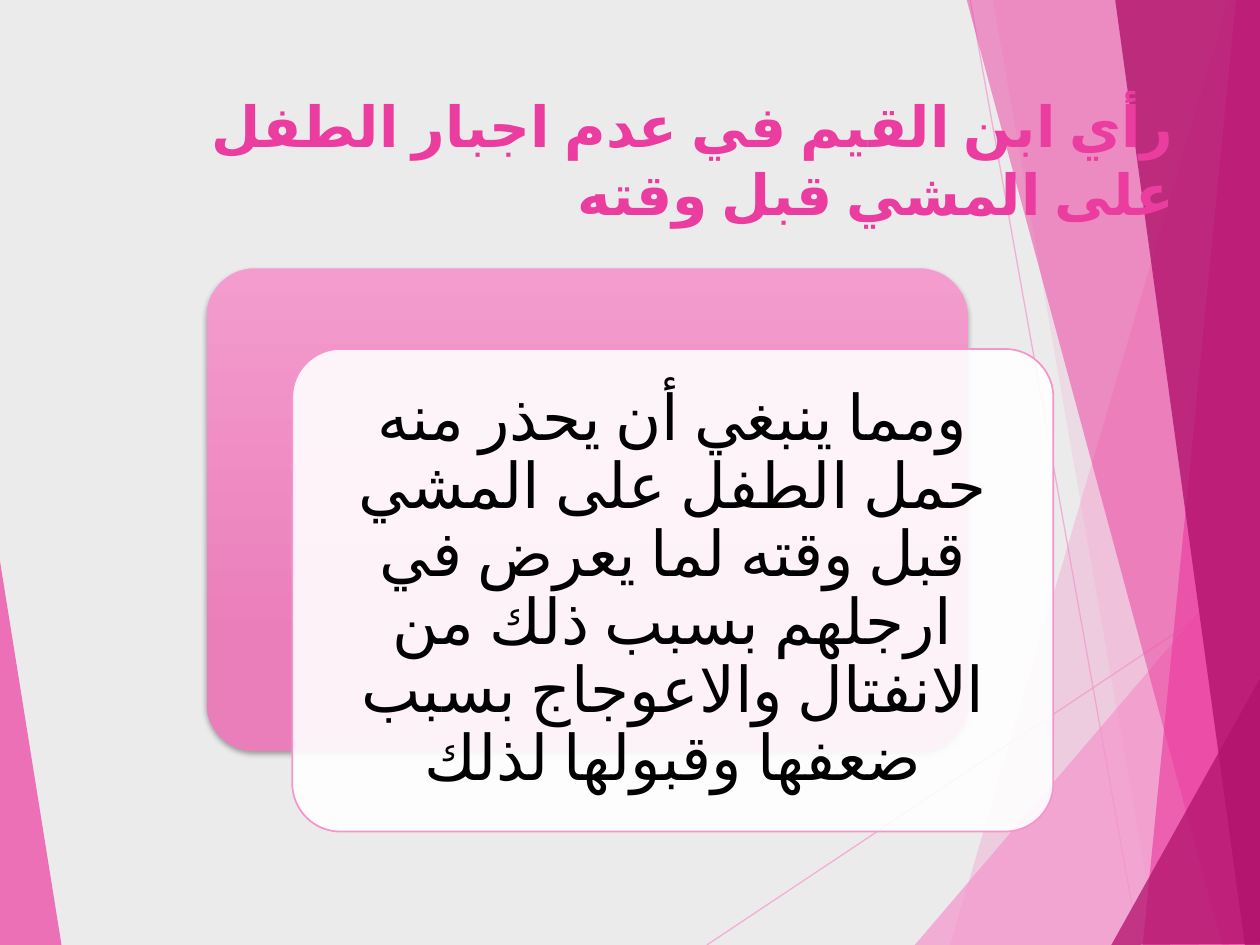
from lxml import etree
from pptx import Presentation
from pptx.dml.color import RGBColor
from pptx.enum.shapes import MSO_CONNECTOR, MSO_SHAPE
from pptx.enum.text import MSO_ANCHOR, PP_ALIGN
from pptx.oxml.ns import qn
from pptx.util import Inches, Pt

STRAIGHT, ROUNDED = MSO_CONNECTOR.STRAIGHT, MSO_SHAPE.ROUNDED_RECTANGLE
TOP, MIDDLE = MSO_ANCHOR.TOP, MSO_ANCHOR.MIDDLE
RIGHT, CENTER = PP_ALIGN.RIGHT, PP_ALIGN.CENTER

WIDTH, HEIGHT = 10, 7.5
FONT = "Karla"
PALE, PINK, DEEP = "F496CB", "EB3D9F", "B2136D"

TITLE = "رأي ابن القيم في عدم اجبار الطفل على المشي قبل وقته"
BODY = ("ومما ينبغي أن يحذر منه حمل الطفل على المشي قبل وقته لما يعرض في "
        "ارجلهم بسبب ذلك من الانفتال والاعوجاج بسبب ضعفها وقبولها لذلك")

RAYS = [(5.61, HEIGHT, 10.01, 4.57), (7.7, 0, 9.04, HEIGHT)]
FACETS = [
    (PALE, 36, [(9.75, 0), (7.54, 7.5), (10.02, 7.51), (10.01, 0.01)]),
    (PALE, 20, [(7.88, -0.01), (9.19, 7.5), (10.01, 7.5), (10.01, -0.01)]),
    (PALE, 72, [(7.26, 7.5), (10, 4.29), (10.01, 7.5)]),
    (PINK, 50, [(7.67, -0.01), (9.7, 7.5), (10.01, 7.49), (10.01, -0.01)]),
    (PINK, 66, [(9.81, -0.01), (9.07, 7.5), (10.01, 7.5), (10, -0.01)]),
    (DEEP, 80, [(8.85, -0.01), (9.88, 7.5), (10.02, 7.5), (10, -0.01)]),
    (DEEP, 76, [(8.82, 7.5), (10.02, 5.35), (10.02, 7.49)]),
    (PINK, 70, [(-0.01, 4.39), (0.49, 7.51), (-0.01, 7.5)]),
]
CARD_LEFT, CARD_TOP, CARD_WIDTH, CARD_HEIGHT = 1.64, 2.13, 6.04, 3.83
CARD_SHIFT_X, CARD_SHIFT_Y, CARD_PADDING = 0.68, 0.64, 0.11


def color(value):
    return RGBColor.from_string(value)


def inches(values):
    return [Inches(value) for value in values]


def add_alpha(parent, percent):
    for node in parent.iter(qn("a:srgbClr")):
        etree.SubElement(node, qn("a:alpha"), val=str(percent * 1000))


def add_ray(page, ends):
    ray = page.shapes.add_connector(STRAIGHT, *inches(ends))
    ray.line.color.rgb = color(PALE)
    ray.line.width = Pt(0.75)
    properties = ray._element.spPr
    add_alpha(properties, 70)
    etree.SubElement(properties, qn("a:effectLst"))


def add_facet(page, fill, opacity, points):
    corners = [(x * 100, y * 100) for x, y in points]
    builder = page.shapes.build_freeform(*corners[0], scale=Inches(0.01))
    builder.add_line_segments(corners[1:], close=True)
    facet = builder.convert_to_shape()
    facet.shadow.inherit = False
    facet.fill.solid()
    facet.fill.fore_color.rgb = color(fill)
    facet.line.fill.background()
    add_alpha(facet._element.spPr, opacity)


def add_card(page, area):
    card = page.shapes.add_shape(ROUNDED, *inches(area))
    card.adjustments[0] = 0.1
    card.shadow.inherit = False
    return card


def add_back_card(page, area):
    card = add_card(page, area)
    card.fill.gradient()
    card.fill.gradient_angle = 270
    stops = [(0, "F49CCD"), (0.78, "EA7EBB")]
    for stop, (position, value) in zip(card.fill.gradient_stops, stops):
        stop.position = position
        stop.color.rgb = color(value)
    card.line.fill.background()
    effects = card._element.spPr.find(qn("a:effectLst"))
    shadow = etree.SubElement(effects, qn("a:outerShdw"), blurRad=str(Pt(3)),
                              dist=str(Pt(2)), dir="5400000", rotWithShape="0")
    etree.SubElement(shadow, qn("a:srgbClr"), val="000000")
    add_alpha(shadow, 35)


def add_front_card(page, area):
    card = add_card(page, area)
    card.fill.solid()
    card.fill.fore_color.rgb = color("FFFFFF")
    add_alpha(card._element.spPr, 90)
    card.line.color.rgb = color(PALE)
    card.line.width = Pt(1)


def add_text(page, text, area, *, size, fill, bold=False, align=RIGHT,
             anchor=TOP, insets=(0.1, 0.05), spacing=1.0):
    frame = page.shapes.add_textbox(*inches(area)).text_frame
    frame.word_wrap = True
    frame.vertical_anchor = anchor
    frame.margin_left = frame.margin_right = Inches(insets[0])
    frame.margin_top = frame.margin_bottom = Inches(insets[1])
    para = frame.paragraphs[0]
    para.alignment = align
    para.line_spacing = spacing
    para._p.get_or_add_pPr().set("rtl", "1")
    span = para.add_run()
    span.text = text
    span.font.name = FONT
    span.font.size = Pt(size)
    span.font.bold = bold
    span.font.color.rgb = color(fill)
    properties = span._r.get_or_add_rPr()
    properties.set("lang", "ar-SA")
    etree.SubElement(properties, qn("a:cs"), typeface=FONT)


def main():
    """Build the slide and save it."""
    deck = Presentation()
    deck.slide_width, deck.slide_height = inches((WIDTH, HEIGHT))
    page = deck.slides.add_slide(deck.slide_layouts[6])
    page.background.fill.solid()
    page.background.fill.fore_color.rgb = color("EBEBEB")
    for ends in RAYS:
        add_ray(page, ends)
    for facet in FACETS:
        add_facet(page, *facet)
    add_text(page, TITLE, (1.06, 0.67, 8.36, 1.2), size=32.4, fill=PINK, bold=True)
    add_back_card(page, (CARD_LEFT, CARD_TOP, CARD_WIDTH, CARD_HEIGHT))
    left, top = CARD_LEFT + CARD_SHIFT_X, CARD_TOP + CARD_SHIFT_Y
    add_front_card(page, (left, top, CARD_WIDTH, CARD_HEIGHT))
    body_area = (left + CARD_PADDING, top + CARD_PADDING,
                 CARD_WIDTH - 2 * CARD_PADDING, CARD_HEIGHT - 2 * CARD_PADDING)
    add_text(page, BODY, body_area, size=36, fill="000000", align=CENTER,
             anchor=MIDDLE, insets=(0.15, 0.15), spacing=0.9)
    deck.save("out.pptx")


if __name__ == "__main__":
    main()
